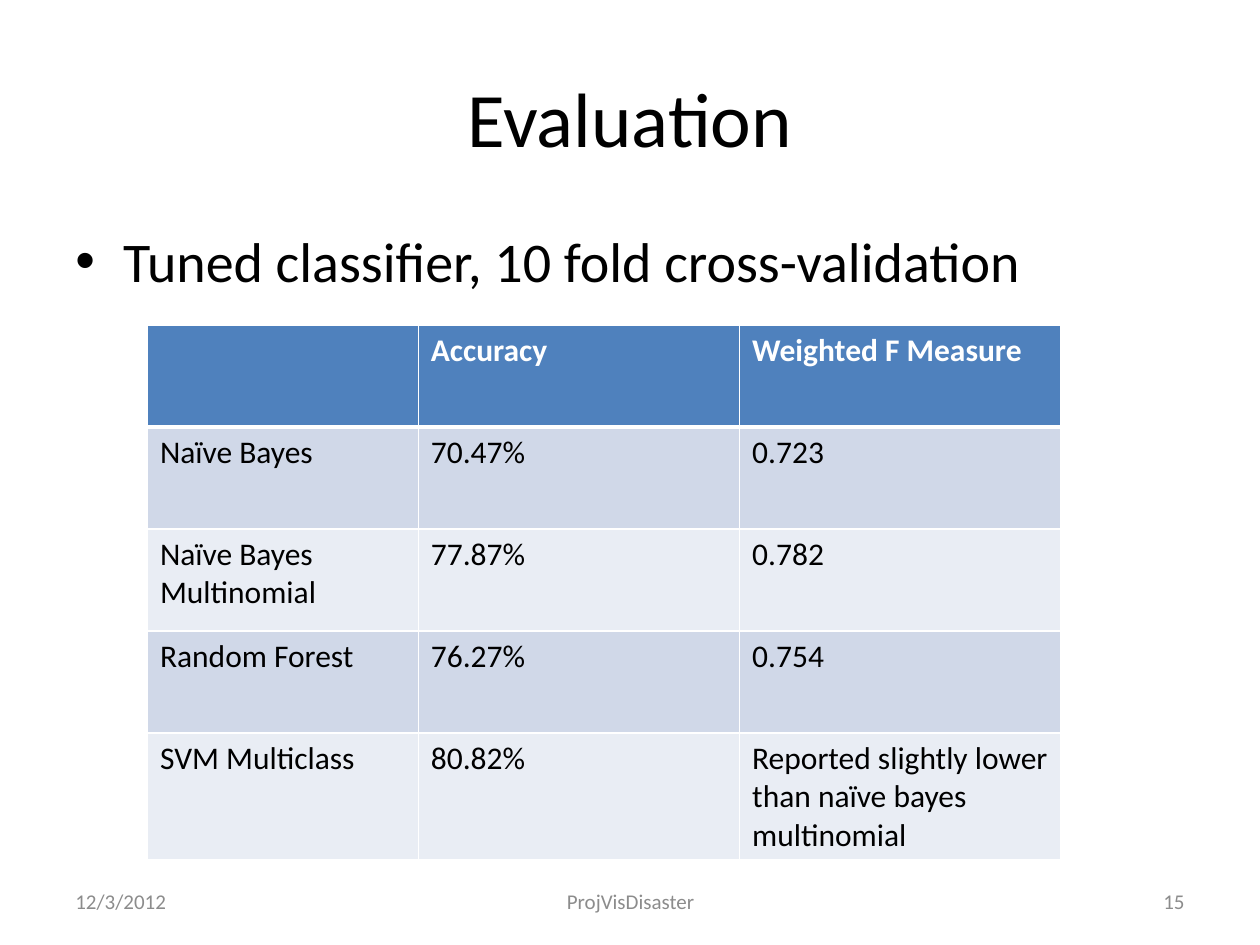
from dataclasses import dataclass

from lxml.etree import SubElement
from pptx import Presentation
from pptx.dml.color import RGBColor
from pptx.enum.text import MSO_ANCHOR, PP_ALIGN
from pptx.oxml.ns import qn
from pptx.util import Inches, Pt


@dataclass(frozen=True)
class Theme:
    font: str = "Calibri"
    text: str = "000000"
    footer: str = "8C8C8C"
    light: str = "FFFFFF"
    header: str = "4F81BD"
    bands: tuple = ("D0D8E8", "E9EDF4")
    title_size: int = 44
    body_size: int = 32
    table_size: int = 18
    footer_size: int = 12


THEME = Theme()

RESULTS = [
    ("", "Accuracy", "Weighted F Measure"),
    ("Naïve Bayes", "70.47%", "0.723"),
    ("Naïve Bayes Multinomial", "77.87%", "0.782"),
    ("Random Forest", "76.27%", "0.754"),
    ("SVM Multiclass", "80.82%",
     "Reported slightly lower than naïve bayes multinomial"),
]
COLUMN_WIDTHS = (2.15, 2.55, 2.55)
ROW_HEIGHT = 0.81


def add_run(paragraph, text, size, color, bold=False):
    run = paragraph.add_run()
    run.text = text
    run.font.name = THEME.font
    run.font.size = Pt(size)
    run.font.bold = bold
    run.font.color.rgb = RGBColor.from_string(color)


def add_text(slide, box, text, size, color=THEME.text,
             align=PP_ALIGN.LEFT, anchor=MSO_ANCHOR.MIDDLE):
    frame = slide.shapes.add_textbox(*map(Inches, box)).text_frame
    frame.word_wrap = True
    frame.vertical_anchor = anchor
    paragraph = frame.paragraphs[0]
    paragraph.alignment = align
    add_run(paragraph, text, size, color)
    return paragraph


def add_bullet(paragraph, indent):
    properties = paragraph._p.get_or_add_pPr()
    properties.set("marL", str(Inches(indent)))
    properties.set("indent", str(Inches(-indent)))
    SubElement(properties, qn("a:buFont"), typeface="Arial")
    SubElement(properties, qn("a:buChar"), char="•")


def set_borders(cell, widths):
    properties = cell._tc.get_or_add_tcPr()
    for side, width in widths.items():
        line = SubElement(properties, qn(f"a:ln{side}"), w=str(Pt(width)))
        fill = SubElement(line, qn("a:solidFill"))
        SubElement(fill, qn("a:srgbClr"), val=THEME.light)


def add_results_table(slide, left, top):
    table = slide.shapes.add_table(
        len(RESULTS), len(COLUMN_WIDTHS), Inches(left), Inches(top),
        Inches(sum(COLUMN_WIDTHS)), Inches(ROW_HEIGHT * len(RESULTS))).table
    for column, width in zip(table.columns, COLUMN_WIDTHS):
        column.width = Inches(width)

    for r, values in enumerate(RESULTS):
        table.rows[r].height = Inches(ROW_HEIGHT)
        is_header = r == 0
        fill = THEME.header if is_header else THEME.bands[(r - 1) % 2]
        color = THEME.light if is_header else THEME.text
        # The heavier rule lies between the header and the first result
        borders = {"L": 1, "R": 1, "T": 3 if r == 1 else 1,
                   "B": 3 if is_header else 1}
        for c, value in enumerate(values):
            cell = table.cell(r, c)
            set_borders(cell, borders)
            cell.fill.solid()
            cell.fill.fore_color.rgb = RGBColor.from_string(fill)
            if value:
                add_run(cell.text_frame.paragraphs[0], value,
                        THEME.table_size, color, bold=is_header)


def add_footer(slide):
    for left, width, text, align in (
            (0.5, 2.33, "12/3/2012", PP_ALIGN.LEFT),
            (3.42, 3.17, "ProjVisDisaster", PP_ALIGN.CENTER),
            (7.17, 2.33, "15", PP_ALIGN.RIGHT)):
        add_text(slide, (left, 6.95, width, 0.4), text,
                 THEME.footer_size, THEME.footer, align)


def main():
    presentation = Presentation()
    presentation.slide_width = Inches(10)
    presentation.slide_height = Inches(7.5)
    slide = presentation.slides.add_slide(presentation.slide_layouts[6])

    # Title and introductory point
    add_text(slide, (0.5, 0.3, 9, 1.25), "Evaluation", THEME.title_size,
             align=PP_ALIGN.CENTER)
    point = add_text(slide, (0.5, 1.75, 9, 4.95),
                     "Tuned classifier, 10 fold cross-validation",
                     THEME.body_size, anchor=MSO_ANCHOR.TOP)
    add_bullet(point, 0.38)

    # Classifier results
    add_results_table(slide, 1.17, 2.58)

    # Date, project and page number
    add_footer(slide)

    presentation.save("out.pptx")


if __name__ == "__main__":
    main()
